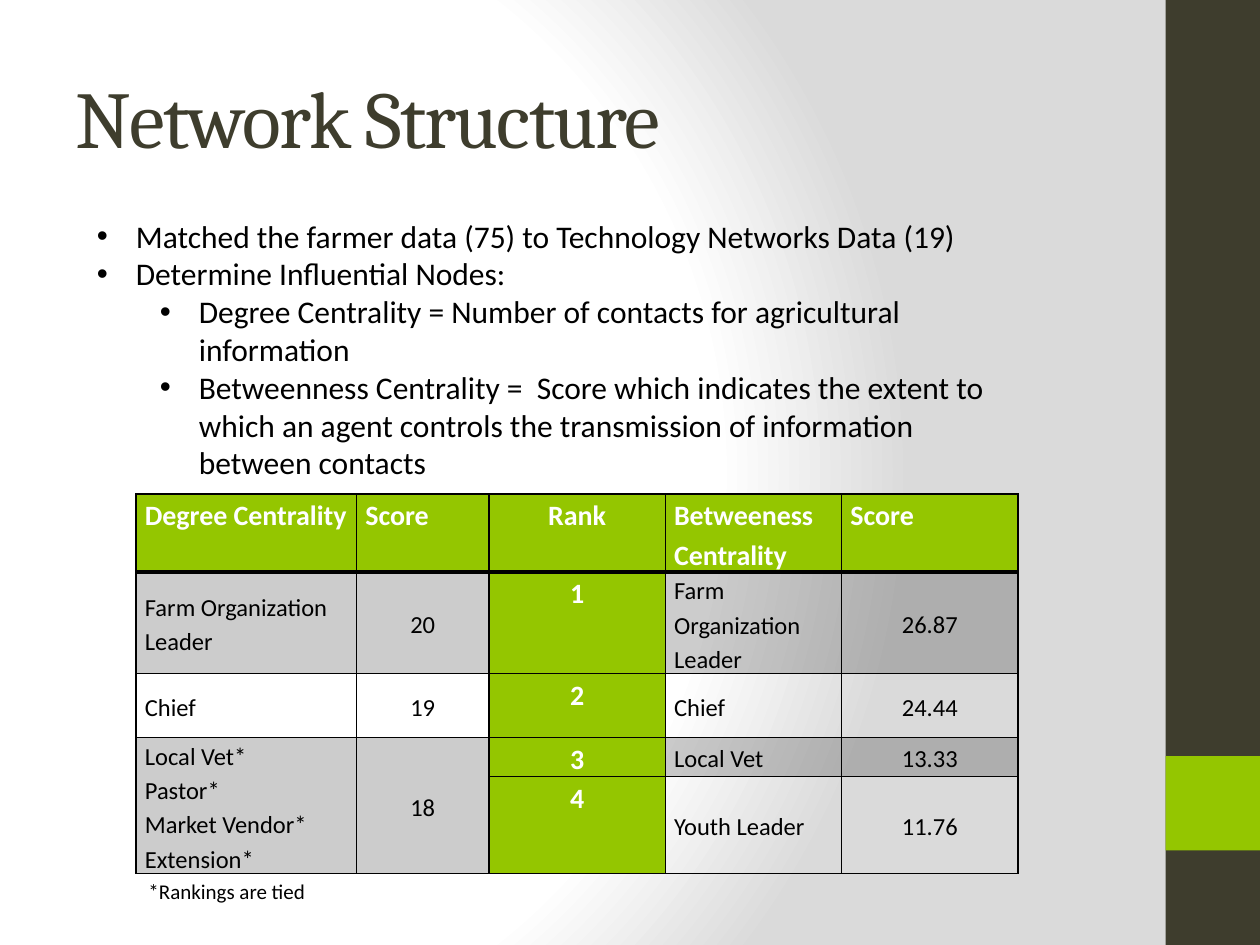
"""Build the Network Structure slide with its centrality ranking table."""
from dataclasses import dataclass

from lxml import etree
from pptx import Presentation
from pptx import util as u
from pptx.dml.color import RGBColor
from pptx.enum import shapes, text
from pptx.oxml import ns, parse_xml

BARK = RGBColor(0x3E, 0x3D, 0x2D)
LIME = RGBColor(0x94, 0xC6, 0x00)
BLACK = RGBColor(0, 0, 0)
WHITE = RGBColor(0xFF, 0xFF, 0xFF)
MIST = RGBColor(0xDA, 0xDA, 0xDA)
BODY_FONT = "Calibri"
RANK_COLUMN = 2
SCORE_COLUMNS = (1, 4)


@dataclass(frozen=True)
class Band:
    top: float
    height: float
    color: RGBColor


@dataclass(frozen=True)
class Bullet:
    words: str
    level: int = 0


@dataclass(frozen=True)
class Style:
    size: float
    color: RGBColor = BLACK
    bold: bool = False
    font: str = BODY_FONT


BANDS = (Band(0, 7.5, BARK), Band(6, 0.75, LIME))
BULLETS = (
    Bullet("Matched the farmer data (75) to Technology Networks Data (19)"),
    Bullet("Determine Influential Nodes:"),
    Bullet("Degree Centrality = Number of contacts for agricultural information", 1),
    Bullet("Betweenness Centrality =  Score which indicates the extent to which an agent "
           "controls the transmission of information between contacts", 1),
)
COLUMN_WIDTHS = (1.75, 1.05, 1.4, 1.4, 1.4)
ROW_HEIGHTS = (0.62, 0.8, 0.51, 0.3, 0.77)
RANKING = (
    ("Degree Centrality", "Score", "Rank", "Betweeness Centrality", "Score"),
    ("Farm Organization Leader", "20", "1", "Farm Organization Leader", "26.87"),
    ("Chief", "19", "2", "Chief", "24.44"),
    ("Local Vet*\nPastor*\nMarket Vendor*\nExtension*", "18", "3", "Local Vet", "13.33"),
    ("", "", "4", "Youth Leader", "11.76"),
)
TITLE_STYLE = Style(46, BARK, font="Cambria")
BULLET_STYLE = Style(18)
HEADING_STYLE = Style(16, WHITE, True)
ENTRY_STYLE = Style(14)
NOTE_STYLE = Style(12)


def add_run(paragraph, words: str, style: Style):
    run = paragraph.add_run()
    run.text = words
    run.font.size = u.Pt(style.size)
    run.font.name = style.font
    run.font.bold = style.bold
    run.font.color.rgb = style.color
    return run


def add_text_frame(slide, left: float, top: float, width: float, height: float):
    frame = slide.shapes.add_textbox(*map(u.Inches, (left, top, width, height))).text_frame
    frame.word_wrap = True
    return frame


def set_background(slide) -> None:
    stops = "".join(
        f'<a:gs pos="{position * 1000}"><a:srgbClr val="{color}"/></a:gs>'
        for position, color in ((0, WHITE), (75, WHITE), (100, MIST)))
    background = parse_xml(
        f'<p:bg {ns.nsdecls("p", "a")}><p:bgPr><a:gradFill rotWithShape="1">'
        f'<a:gsLst>{stops}</a:gsLst><a:path path="circle">'
        '<a:fillToRect l="20000" t="50000" r="100000" b="50000"/></a:path>'
        '</a:gradFill><a:effectLst/></p:bgPr></p:bg>')
    slide.element.cSld.insert(0, background)


def draw_band(slide, band: Band) -> None:
    bar = slide.shapes.add_shape(
        shapes.MSO_SHAPE.RECTANGLE, u.Inches(9.25), u.Inches(band.top),
        u.Inches(0.75), u.Inches(band.height))
    bar.shadow.inherit = False
    bar.fill.solid()
    bar.fill.fore_color.rgb = band.color
    bar.line.fill.background()


def write_bullet(paragraph, bullet: Bullet) -> None:
    paragraph.level = bullet.level
    properties = paragraph._p.get_or_add_pPr()
    properties.set("marL", str(u.Inches(0.31 + 0.5 * bullet.level)))
    properties.set("indent", str(u.Inches(-0.31)))
    etree.SubElement(properties, ns.qn("a:buFont"), typeface="Arial")
    etree.SubElement(properties, ns.qn("a:buChar"), char="•")
    add_run(paragraph, bullet.words, BULLET_STYLE)


def set_borders(cell, row: int) -> None:
    widths = {"L": 1, "R": 1, "T": 2 if row == 1 else 1, "B": 2 if row == 0 else 1}
    for index, (side, points) in enumerate(widths.items()):
        border = parse_xml(
            f'<a:ln{side} {ns.nsdecls("a")} w="{u.Pt(points)}"><a:solidFill>'
            f'<a:srgbClr val="{BLACK}"/></a:solidFill></a:ln{side}>')
        cell._tc.get_or_add_tcPr().insert(index, border)


def fill_cell(cell, row: int, column: int) -> None:
    if row == 0 or column == RANK_COLUMN:
        cell.fill.solid()
        cell.fill.fore_color.rgb = LIME
    elif row % 2 or column < RANK_COLUMN and row == 4:
        cell.fill.solid()
        cell.fill.fore_color.rgb = BLACK
        tint = cell._tc.tcPr.find(".//" + ns.qn("a:srgbClr"))
        etree.SubElement(tint, ns.qn("a:alpha"), val="20000")
    else:
        cell.fill.background()


def write_cell(cell, words: str, row: int, column: int) -> None:
    heading = row == 0 or column == RANK_COLUMN
    centred = column == RANK_COLUMN or row > 0 and column in SCORE_COLUMNS
    cell.margin_left = cell.margin_right = u.Inches(0.07)
    cell.margin_top = cell.margin_bottom = 0
    cell.vertical_anchor = text.MSO_ANCHOR.TOP if heading else text.MSO_ANCHOR.MIDDLE
    for index, line in enumerate(words.split("\n") if words else ()):
        frame = cell.text_frame
        paragraph = frame.add_paragraph() if index else frame.paragraphs[0]
        paragraph.line_spacing = 1.15
        paragraph.alignment = text.PP_ALIGN.CENTER if centred else text.PP_ALIGN.LEFT
        add_run(paragraph, line, HEADING_STYLE if heading else ENTRY_STYLE)


def draw_ranking(slide) -> None:
    table = slide.shapes.add_table(
        len(ROW_HEIGHTS), len(COLUMN_WIDTHS), u.Inches(1.08), u.Inches(3.92),
        u.Inches(sum(COLUMN_WIDTHS)), u.Inches(sum(ROW_HEIGHTS))).table
    table.first_row = table.horz_banding = False
    for column, width in zip(table.columns, COLUMN_WIDTHS):
        column.width = u.Inches(width)
    for row, height in zip(table.rows, ROW_HEIGHTS):
        row.height = u.Inches(height)
    for row, entries in enumerate(RANKING):
        for column, words in enumerate(entries):
            cell = table.cell(row, column)
            fill_cell(cell, row, column)
            set_borders(cell, row)
            write_cell(cell, words, row, column)
    for column in range(RANK_COLUMN):
        table.cell(3, column).merge(table.cell(4, column))


def main() -> None:
    deck = Presentation()
    deck.slide_width, deck.slide_height = u.Inches(10), u.Inches(7.5)
    slide = deck.slides.add_slide(deck.slide_layouts[6])
    set_background(slide)
    for band in BANDS:
        draw_band(slide, band)

    title = add_text_frame(slide, 0.5, 0.3, 8.33, 1.25)
    title.vertical_anchor = text.MSO_ANCHOR.MIDDLE
    heading = add_run(title.paragraphs[0], "Network Structure", TITLE_STYLE)
    heading.font._element.set("spc", "-100")

    points = add_text_frame(slide, 0.67, 1.67, 7.42, 2.22)
    for index, bullet in enumerate(BULLETS):
        write_bullet(points.add_paragraph() if index else points.paragraphs[0], bullet)

    draw_ranking(slide)
    note = add_text_frame(slide, 1.08, 6.92, 6.25, 0.3)
    add_run(note.paragraphs[0], "*Rankings are tied", NOTE_STYLE)
    deck.save("out.pptx")


if __name__ == "__main__":
    main()
